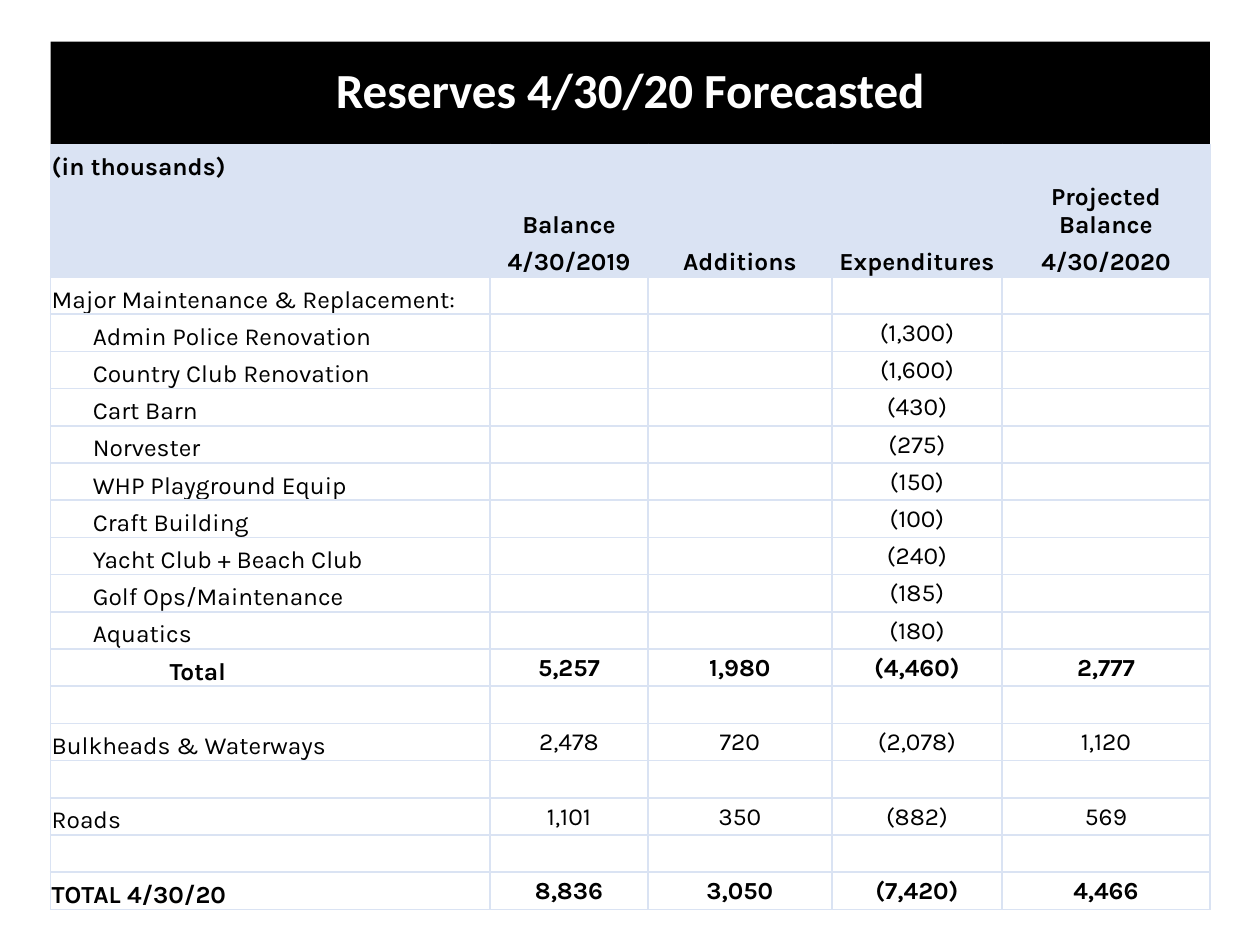
"""Build the reserves forecast slide: a title bar above a table of balances."""
from dataclasses import dataclass

from lxml import etree
from pptx import Presentation
from pptx.dml.color import RGBColor
from pptx.enum import text
from pptx.oxml.ns import qn
from pptx.util import Cm, Pt

BLACK, WHITE, PALE = "000000", "FFFFFF", "DAE3F3"
LEFT, WIDTH = 1.02, 23.37
COL_WIDTHS = (8.86, 3.18, 3.71, 3.43, 4.19)
ROW_HEIGHT = 0.75
ITEM_INDENT, TOTAL_INDENT = 0.83, 2.38
SIZE = 14


@dataclass
class Row:
    label: str = ""
    values: tuple[str, ...] = ("", "", "", "")
    bold: bool = False
    indent: float = 0
    header: bool = False


def heading(label: str = "", *values: str) -> Row:
    return Row(label, values or Row.values, bold=True, header=True)


def item(label: str, spent: str) -> Row:
    return Row(label, ("", "", spent, ""), indent=ITEM_INDENT)


ROWS = [
    heading("(in thousands)"),
    heading("", "Balance", "", "", "Projected Balance"),
    heading("", "4/30/2019", "Additions", "Expenditures", "4/30/2020"),
    Row("Major Maintenance & Replacement:"),
    item("Admin Police Renovation", "(1,300)"),
    item("Country Club Renovation", "(1,600)"),
    item("Cart Barn", "(430)"),
    item("Norvester", "(275)"),
    item("WHP Playground Equip", "(150)"),
    item("Craft Building", "(100)"),
    item("Yacht Club + Beach Club", "(240)"),
    item("Golf Ops/Maintenance", "(185)"),
    item("Aquatics", "(180)"),
    Row("Total", ("5,257", "1,980", "(4,460)", "2,777"), bold=True, indent=TOTAL_INDENT),
    Row(),
    Row("Bulkheads & Waterways", ("2,478", "720", "(2,078)", "1,120")),
    Row(),
    Row("Roads", ("1,101", "350", "(882)", "569")),
    Row(),
    Row("TOTAL 4/30/20", ("8,836", "3,050", "(7,420)", "4,466"), bold=True),
]


def rgb(color: str) -> RGBColor:
    return RGBColor.from_string(color)


def write(tf, content: str, *, font: str = "Karla", size: float = SIZE, color: str = BLACK,
          bold: bool = False, align=text.PP_ALIGN.LEFT, spacing: float = 1.0) -> None:
    p = tf.paragraphs[0]
    p.alignment, p.line_spacing = align, spacing
    if not content:
        p._p.get_or_add_endParaRPr().set("sz", str(size * 100))
        return
    r = p.add_run()
    r.text = content
    r.font.name, r.font.size, r.font.bold = font, Pt(size), bold
    r.font.color.rgb = rgb(color)


def add_borders(cell, color: str, width: float) -> None:
    tc_pr = cell._tc.get_or_add_tcPr()
    for side in ("lnL", "lnR", "lnT", "lnB"):
        ln = etree.SubElement(tc_pr, qn(f"a:{side}"), w=str(Pt(width)))
        fill = etree.SubElement(ln, qn("a:solidFill"))
        etree.SubElement(fill, qn("a:srgbClr"), val=color)


def fill_cell(cell, content: str, row: Row, is_label: bool) -> None:
    add_borders(cell, PALE, 1)
    if row.header:
        cell.fill.solid()
        cell.fill.fore_color.rgb = rgb(PALE)
    else:
        cell.fill.background()
    cell.margin_left = Cm(0.02 + (row.indent if is_label else 0))
    cell.margin_right = cell.margin_top = Cm(0.02)
    cell.margin_bottom = 0
    at_bottom = is_label or row.header
    cell.vertical_anchor = text.MSO_ANCHOR.BOTTOM if at_bottom else text.MSO_ANCHOR.MIDDLE
    align = text.PP_ALIGN.LEFT if is_label else text.PP_ALIGN.CENTER
    write(cell.text_frame, content, bold=row.bold, align=align)


def add_title(s, content: str) -> None:
    sp = s.shapes.title
    sp.left, sp.top, sp.width, sp.height = Cm(LEFT), Cm(0.84), Cm(WIDTH), Cm(2.06)
    sp.fill.solid()
    sp.fill.fore_color.rgb = rgb(BLACK)
    sp.text_frame.vertical_anchor = text.MSO_ANCHOR.MIDDLE
    write(sp.text_frame, content, font="Calibri", size=28, color=WHITE, bold=True,
          align=text.PP_ALIGN.CENTER, spacing=0.9)


def add_reserves_table(s, rows: list[Row]) -> None:
    table = s.shapes.add_table(len(rows), len(COL_WIDTHS), Cm(LEFT), Cm(2.91), Cm(WIDTH),
                               Cm(ROW_HEIGHT * len(rows))).table
    table.first_row = table.horz_banding = False
    for column, width in zip(table.columns, COL_WIDTHS):
        column.width = Cm(width)
    for i, row in enumerate(rows):
        table.rows[i].height = Cm(ROW_HEIGHT)
        for j, content in enumerate((row.label, *row.values)):
            fill_cell(table.cell(i, j), content, row, is_label=j == 0)


def main() -> None:
    prs = Presentation()
    prs.slide_width, prs.slide_height = Cm(25.4), Cm(19.05)
    s = prs.slides.add_slide(prs.slide_layouts[5])
    add_title(s, "Reserves 4/30/20 Forecasted")
    add_reserves_table(s, ROWS)
    prs.save("out.pptx")


if __name__ == "__main__":
    main()
